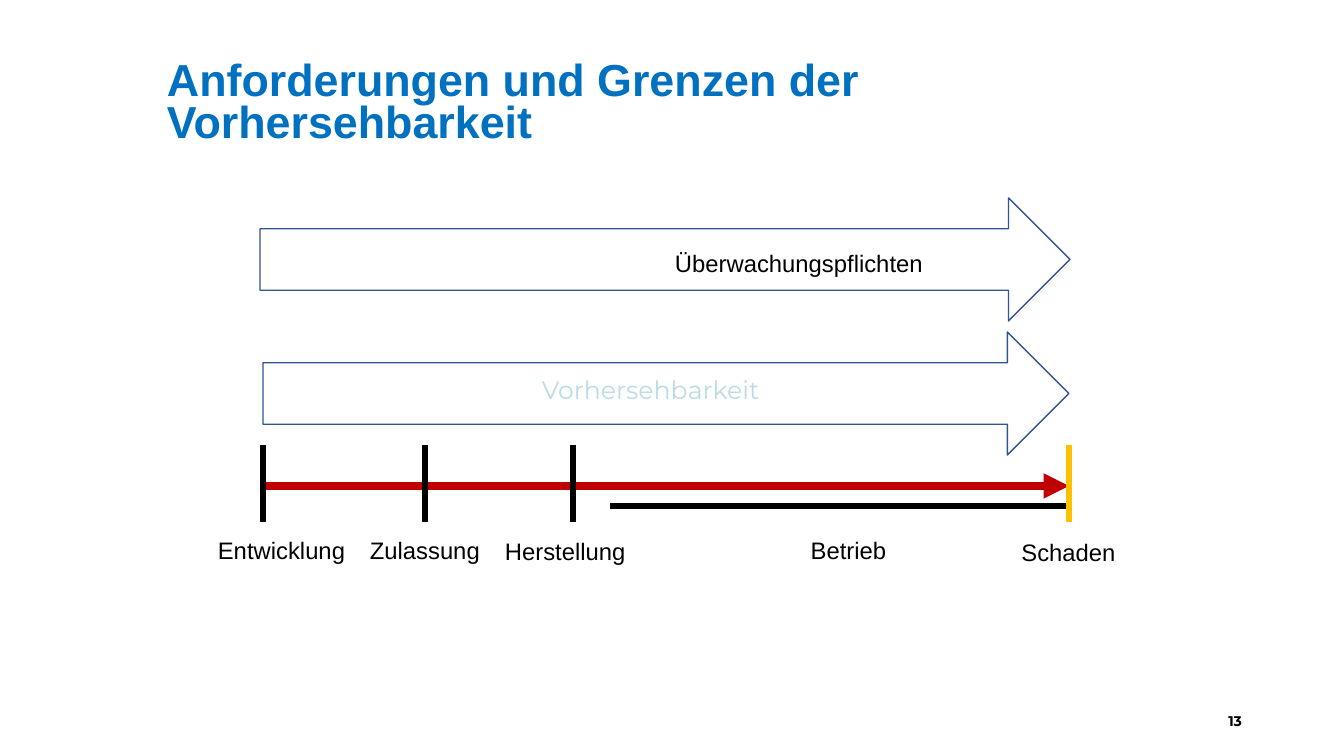
"""Build the slide on requirements and limits of foreseeability."""
import pptx
import pptx.dml.color
import pptx.enum.shapes
import pptx.enum.text
import pptx.oxml
import pptx.oxml.ns
import pptx.util

PX = 914400 / 100.8
COLORS = {"black": "000000", "white": "FFFFFF", "title": "0070C0", "time": "C00000",
          "damage": "FFC000", "outline": "325491", "pale": "B9DDE2"}
ALIGN = pptx.enum.text.PP_ALIGN
ANCHOR = pptx.enum.text.MSO_ANCHOR
TICK_TOP, TICK_BOTTOM = 445, 522
START, END = 263, 1069


def px(n):
    """Turn pixels into EMU."""
    return pptx.util.Emu(round(n * PX))


def rgb(name):
    """Look up a colour by name."""
    return pptx.dml.color.RGBColor.from_string(COLORS[name])


def set_all(obj, values):
    """Set attributes from a dict of format values."""
    for name, value in values.items():
        setattr(obj, name, value)


def write(sp, text, size=17, font="Arial", color="black", bold=False,
          align=ALIGN.LEFT, frame=None, para=None):
    """Write one formatted paragraph into a shape."""
    tf = sp.text_frame
    set_all(tf, {"word_wrap": True, "auto_size": pptx.enum.text.MSO_AUTO_SIZE.NONE,
                 "vertical_anchor": ANCHOR.TOP, **(frame or {})})
    p = tf.paragraphs[0]
    set_all(p, {"alignment": align, **(para or {})})
    r = p.add_run()
    r.text = text
    set_all(r.font, {"size": pptx.util.Pt(size), "name": font, "bold": bold})
    r.font.color.rgb = rgb(color)


def add_label(s, box, text, **fmt):
    """Add a text box with one paragraph."""
    write(s.shapes.add_textbox(*map(px, box)), text, **fmt)


def add_line(s, x1, y1, x2, y2, color="black", width=4.5, arrow=False):
    """Add a straight line, with an arrowhead on request."""
    c = s.shapes.add_connector(pptx.enum.shapes.MSO_CONNECTOR.STRAIGHT,
                               *map(px, (x1, y1, x2, y2)))
    c.line.color.rgb = rgb(color)
    c.line.width = pptx.util.Pt(width)
    if arrow:
        ln = c.line._get_or_add_ln()
        tail = pptx.oxml.parse_xml(
            f'<a:tailEnd {pptx.oxml.ns.nsdecls("a")} type="triangle"/>')
        ln.append(tail)
    c._element.spPr.append(pptx.oxml.parse_xml(
        f'<a:effectLst {pptx.oxml.ns.nsdecls("a")}/>'))


def add_block_arrow(s, box):
    """Add a white block arrow with a thin outline."""
    sp = s.shapes.add_shape(pptx.enum.shapes.MSO_SHAPE.RIGHT_ARROW, *map(px, box))
    sp.shadow.inherit = False
    sp.fill.solid()
    sp.fill.fore_color.rgb = rgb("white")
    sp.line.color.rgb = rgb("outline")
    sp.line.width = pptx.util.Pt(1)


def add_title(s, box, text):
    """Place and fill the title placeholder."""
    sp = s.shapes.title
    set_all(sp, dict(zip(("left", "top", "width", "height"), map(px, box))))
    write(sp, text, size=32, color="title", bold=True,
          frame={"margin_left": 0, "margin_top": px(8), "margin_right": 0,
                 "margin_bottom": 0},
          para={"line_spacing": pptx.util.Pt(30)})


def add_timeline(s):
    """Draw the time arrow, its ticks and the phase labels."""
    add_line(s, START, 486, END, 486, "time", 6, arrow=True)
    add_line(s, END, 506, 610, 506)
    for x, color in ((START, "black"), (425, "black"), (573, "black"), (END, "damage")):
        add_line(s, x, TICK_TOP, x, TICK_BOTTOM, color)
    for left, top, width, text, align in (
            (208, 531, 152, "Entwicklung", ALIGN.LEFT),
            (360, 531, 135, "Zulassung", ALIGN.LEFT),
            (495, 532, 152, "Herstellung", ALIGN.LEFT),
            (787, 531, 123, "Betrieb", ALIGN.CENTER),
            (1007, 533, 123, "Schaden", ALIGN.CENTER)):
        add_label(s, (left, top, width, 39), text, align=align)


def main():
    """Build and save the slide."""
    prs = pptx.Presentation()
    set_all(prs, {"slide_width": px(1344), "slide_height": px(756)})
    s = prs.slides.add_slide(prs.slide_layouts[5])
    add_title(s, (167, 55, 1031, 99), "Anforderungen und Grenzen der Vorhersehbarkeit")
    add_timeline(s)
    add_block_arrow(s, (START, 332, END - START, 123))
    add_label(s, (532, 369, 301, 40), "Vorhersehbarkeit", size=18,
              font="Montserrat", color="pale")
    add_block_arrow(s, (260, 198, 810, 123))
    add_label(s, (665, 244, 301, 39), "Überwachungspflichten")
    add_label(s, (950, 701, 302, 40), "13", size=10, font="Montserrat", bold=True,
              align=ALIGN.RIGHT, frame={"vertical_anchor": ANCHOR.MIDDLE})
    prs.save("out.pptx")


if __name__ == "__main__":
    main()
